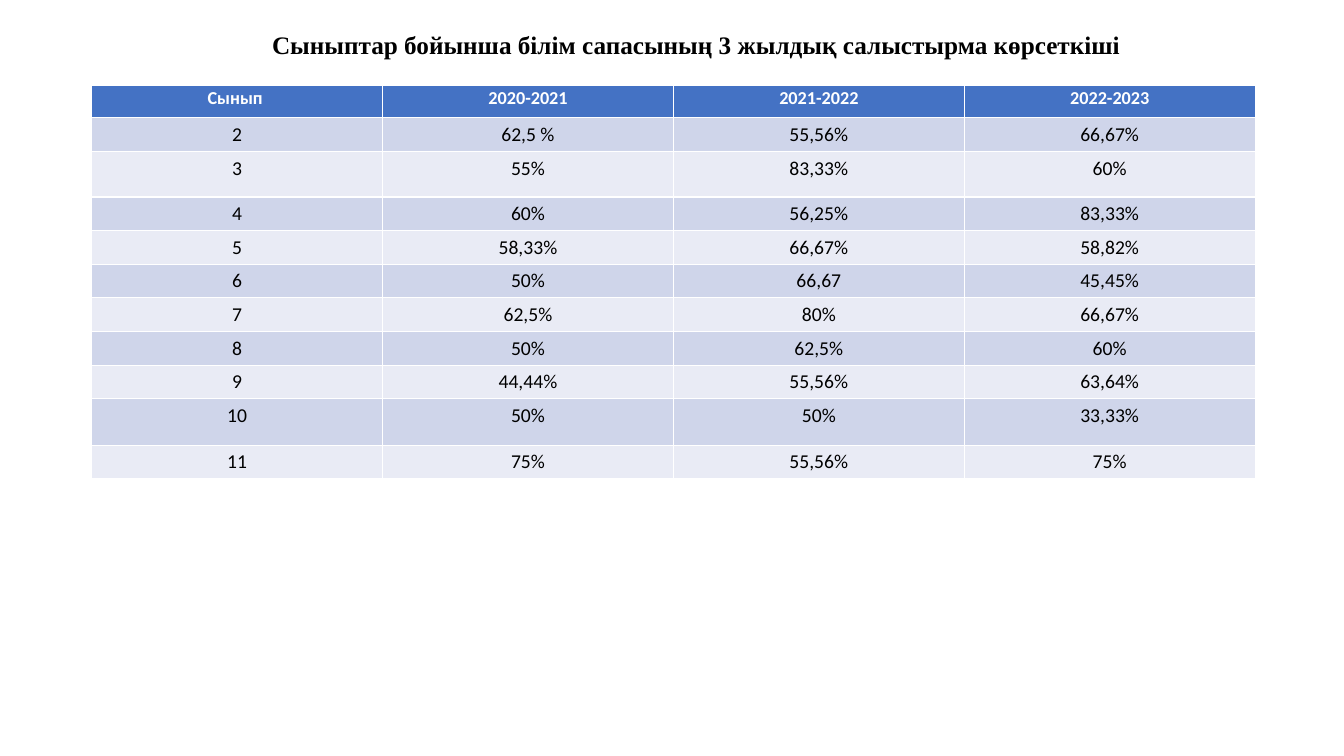
"""Build a slide with a three-year comparison table of education quality by class."""
from dataclasses import dataclass

from pptx import Presentation
from pptx.dml.color import RGBColor
from pptx.enum.text import MSO_ANCHOR, MSO_AUTO_SIZE, PP_ALIGN
from pptx.util import Inches, Pt

CENTER = PP_ALIGN.CENTER
TOP = MSO_ANCHOR.TOP
FIT_SHAPE = MSO_AUTO_SIZE.SHAPE_TO_FIT_TEXT
TITLE_ONLY = 5

TITLE = "Сыныптар бойынша білім сапасының 3 жылдық салыстырма көрсеткіші"
HEADER = ("Сынып ", "2020-2021", "2021-2022", "2022-2023")
RESULTS = [
    ("2", "62,5 %", "55,56%", "66,67%"),
    ("3", "55%", "83,33%", "60%"),
    ("4", "60%", "56,25%", "83,33%"),
    ("5", "58,33%", "66,67%", "58,82%"),
    ("6", "50%", "66,67", "45,45%"),
    ("7", "62,5%", "80%", "66,67%"),
    ("8", "50%", "62,5%", "60%"),
    ("9", "44,44%", "55,56%", "63,64%"),
    ("10", "50%", "50%", "33,33%"),
    ("11", "75%", "55,56%", "75%"),
]

SLIDE_W, SLIDE_H = 13.33, 7.5
TITLE_BOX = (1.78, 0.22, 10.25, 0.41)
TABLE_LEFT, TABLE_TOP, TABLE_W = 0.91, 0.85, 11.54
ROW_H = 0.33
SPECIAL_ROWS = {0: 0.32, 2: 0.45, 9: 0.46}


@dataclass(frozen=True)
class Theme:
    title_font: str = "Times New Roman"
    table_font: str = "Calibri"
    title_size: int = 18
    header_size: int = 13
    body_size: int = 14
    dark: str = "000000"
    light: str = "FFFFFF"
    header_fill: str = "4472C4"
    bands: tuple = ("CFD5EA", "E9EBF5")


THEME = Theme()


def write(tf, text, *, font, size, color, bold=False, spacing=1.0, after=0):
    p = tf.paragraphs[0]
    p.alignment = CENTER
    p.line_spacing = spacing
    p.space_after = Pt(after)
    r = p.add_run()
    r.text = text
    r.font.name = font
    r.font.size = Pt(size)
    r.font.bold = bold
    r.font.color.rgb = RGBColor.from_string(color)


def add_title(slide):
    sp = slide.shapes.title
    sp.left, sp.top, sp.width, sp.height = map(Inches, TITLE_BOX)
    tf = sp.text_frame
    tf.word_wrap = True
    tf.auto_size = FIT_SHAPE
    tf.vertical_anchor = TOP
    write(tf, TITLE, font=THEME.title_font, size=THEME.title_size,
          color=THEME.dark, bold=True, spacing=1.07, after=8)


def add_results(slide):
    rows = [HEADER, *RESULTS]
    heights = [SPECIAL_ROWS.get(i, ROW_H) for i in range(len(rows))]
    box = map(Inches, (TABLE_LEFT, TABLE_TOP, TABLE_W, sum(heights)))
    table = slide.shapes.add_table(len(rows), len(HEADER), *box).table
    header_format = dict(size=THEME.header_size, color=THEME.light,
                         bold=True, spacing=1.07, after=8)
    body_format = dict(size=THEME.body_size, color=THEME.dark)
    for i, (values, height) in enumerate(zip(rows, heights)):
        table.rows[i].height = Inches(height)
        is_header = i == 0
        fill = THEME.header_fill if is_header else THEME.bands[(i - 1) % 2]
        for j, text in enumerate(values):
            cell = table.cell(i, j)
            cell.fill.solid()
            cell.fill.fore_color.rgb = RGBColor.from_string(fill)
            if is_header:
                cell.margin_left = cell.margin_right = Inches(0.07)
                cell.margin_top = cell.margin_bottom = 0
            write(cell.text_frame, text, font=THEME.table_font,
                  **(header_format if is_header else body_format))


def main():
    prs = Presentation()
    prs.slide_width, prs.slide_height = Inches(SLIDE_W), Inches(SLIDE_H)
    slide = prs.slides.add_slide(prs.slide_layouts[TITLE_ONLY])
    add_title(slide)
    add_results(slide)
    prs.save("out.pptx")


if __name__ == "__main__":
    main()
